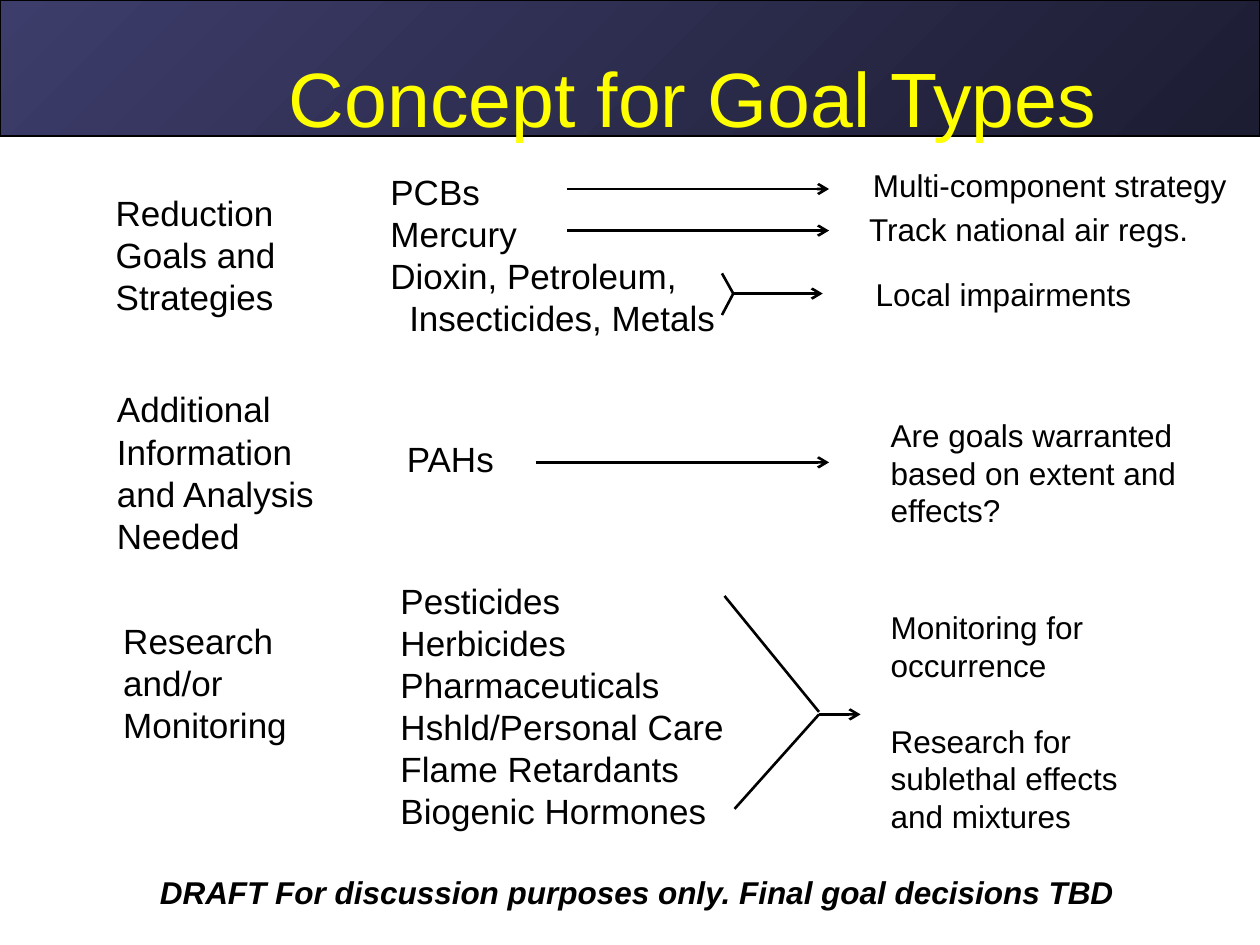
from lxml import etree
from pptx import Presentation
from pptx.dml.color import RGBColor
from pptx.enum.shapes import MSO_CONNECTOR, MSO_SHAPE
from pptx.enum.text import MSO_ANCHOR, PP_ALIGN
from pptx.oxml.ns import qn
from pptx.util import Inches, Pt

BLACK = RGBColor(0x00, 0x00, 0x00)
YELLOW = RGBColor(0xFF, 0xFF, 0x00)
BAND_LIGHT = RGBColor(0x3D, 0x3D, 0x6B)
BAND_DARK = RGBColor(0x1C, 0x1C, 0x32)

prs = Presentation()
prs.slide_width, prs.slide_height = Inches(10), Inches(7.5)
s = prs.slides.add_slide(prs.slide_layouts[6])


def add_text(x, y, w, h, lines, size, color=BLACK, wrap=True):
    tf = s.shapes.add_textbox(Inches(x), Inches(y), Inches(w), Inches(h)).text_frame
    tf.word_wrap = wrap
    for i, line in enumerate(lines):
        p = tf.paragraphs[0] if i == 0 else tf.add_paragraph()
        r = p.add_run()
        r.text = line
        r.font.name = "Arial"
        r.font.size = Pt(size)
        r.font.color.rgb = color
    return tf


def add_line(x1, y1, x2, y2, arrow=False):
    c = s.shapes.add_connector(MSO_CONNECTOR.STRAIGHT, Inches(x1), Inches(y1),
                               Inches(x2), Inches(y2))
    c.line.color.rgb = BLACK
    c.line.width = Pt(1.5)
    if arrow:
        etree.SubElement(c.line._get_or_add_ln(), qn("a:tailEnd"), type="arrow")
    etree.SubElement(c._element.spPr, qn("a:effectLst"))


# Title band
band = s.shapes.add_shape(MSO_SHAPE.RECTANGLE, 0, 0, Inches(10), Inches(1.08))
band.shadow.inherit = False
band.fill.gradient()
band.fill.gradient_angle = 315
for stop, color in zip(band.fill.gradient_stops, (BAND_LIGHT, BAND_DARK)):
    stop.color.rgb = color
band.line.color.rgb = BLACK
band.line.width = Pt(0.75)

# Title
tf = add_text(1, 0.25, 9, 1.03, ["Concept for Goal Types"], 44, YELLOW)
tf.vertical_anchor = MSO_ANCHOR.MIDDLE
tf.paragraphs[0].alignment = PP_ALIGN.CENTER

# Goal types
add_text(0.82, 1.47, 2.17, 1.11, ["Reduction Goals and Strategies"], 20)
add_text(0.83, 3.03, 1.83, 1.45, ["Additional Information and Analysis Needed"], 20)
add_text(0.88, 4.87, 1.83, 1.11, ["Research and/or Monitoring"], 20)

# Contaminants
tf = add_text(3, 1.3, 2.83, 1.45,
              ["PCBs", "Mercury", "Dioxin, Petroleum,", "Insecticides, Metals"], 20)
tf.paragraphs[3]._p.get_or_add_pPr().set("marL", str(Inches(0.15)))
add_text(3.13, 3.42, 2.25, 0.44, ["PAHs"], 20)
add_text(3.08, 4.55, 2.92, 2.12,
         ["Pesticides", "Herbicides", "Pharmaceuticals", "Hshld/Personal Care",
          "Flame Retardants", "Biogenic Hormones"], 20)

# Arrows to the actions
for x1, x2, y in [(4.5, 6.58, 1.5), (4.5, 6.58, 1.83), (5.82, 6.53, 2.33),
                  (4.25, 6.58, 3.67), (6.5, 6.83, 5.67)]:
    add_line(x1, y, x2, y, arrow=True)

# Brackets that gather several contaminants into one arrow
for ends in [(5.73, 2.17, 5.82, 2.33), (5.82, 2.33, 5.73, 2.5),
             (5.75, 4.73, 6.5, 5.65), (6.5, 5.67, 5.83, 6.42)]:
    add_line(*ends)

# Actions
add_text(6.83, 1.27, 3.17, 0.4, ["Multi-component strategy"], 18)
add_text(6.8, 1.62, 2.76, 0.4, ["Track national air regs."], 18, wrap=False)
add_text(6.85, 2.13, 2.92, 0.4, ["Local impairments"], 18)
add_text(6.97, 3.25, 2.5, 1.01, ["Are goals warranted based on extent and effects?"], 18)
tf = add_text(6.97, 4.78, 2.33, 1.92,
              ["Monitoring for occurrence", "Research for sublethal effects and mixtures"], 18)
tf.paragraphs[1].space_before = Pt(21.5)

# Draft notice
tf = add_text(1.17, 6.88, 7.92, 0.4,
              ["DRAFT For discussion purposes only. Final goal decisions TBD"], 18)
r = tf.paragraphs[0].runs[0]
r.font.bold = r.font.italic = True

prs.save("out.pptx")
